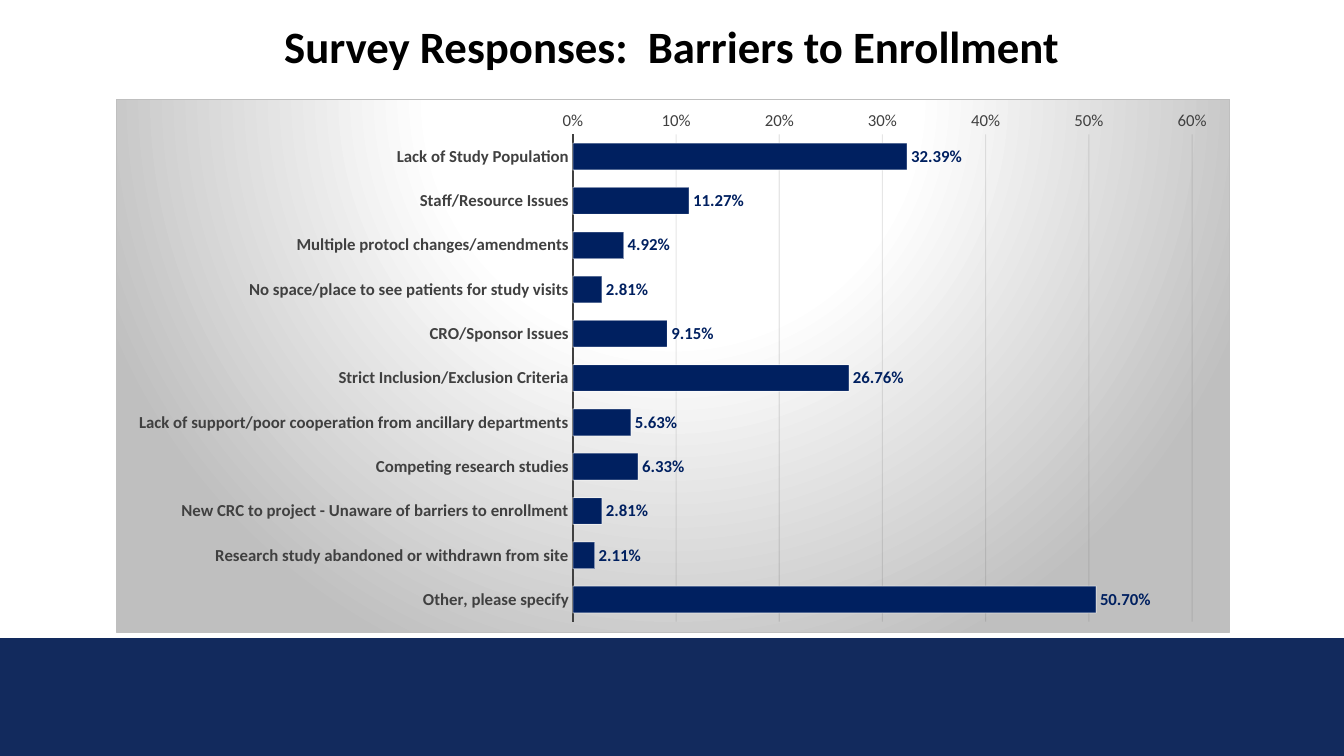
from lxml.etree import SubElement
from pptx import Presentation
from pptx.chart.data import CategoryChartData
from pptx.dml.color import RGBColor
from pptx.enum.chart import XL_CHART_TYPE, XL_LABEL_POSITION, XL_TICK_MARK
from pptx.enum.shapes import MSO_SHAPE
from pptx.enum.text import MSO_ANCHOR, PP_ALIGN
from pptx.oxml import parse_xml
from pptx.oxml.ns import nsdecls, qn
from pptx.util import Cm, Pt

FONT = "Calibri"
BLACK = RGBColor(0x00, 0x00, 0x00)
WHITE = RGBColor(0xFF, 0xFF, 0xFF)
BAND_BLUE = RGBColor(0x12, 0x2A, 0x5D)
BAR_NAVY = RGBColor(0x00, 0x20, 0x60)
AXIS_GREY = RGBColor(0x40, 0x40, 0x40)
GRID_DARK = RGBColor(0x0D, 0x0D, 0x0D)
PANEL_GREY = RGBColor(0xBF, 0xBF, 0xBF)

BARRIERS = {
    "Lack of Study Population": 0.3239,
    "Staff/Resource Issues": 0.1127,
    "Multiple protocl changes/amendments": 0.0492,
    "No space/place to see patients for study visits": 0.0281,
    "CRO/Sponsor Issues": 0.0915,
    "Strict Inclusion/Exclusion Criteria": 0.2676,
    "Lack of support/poor cooperation from ancillary departments": 0.0563,
    "Competing research studies": 0.0633,
    "New CRC to project - Unaware of barriers to enrollment": 0.0281,
    "Research study abandoned or withdrawn from site": 0.0211,
    "Other, please specify": 0.507,
}


def style_font(font, size, color, bold=False):
    font.name = FONT
    font.size = Pt(size)
    font.bold = bold
    font.color.rgb = color


def style_line(line, color, width, opacity=100):
    line.color.rgb = color
    line.width = Pt(width)
    if opacity < 100:
        color_xml = line.fill._xPr.find(".//" + qn("a:srgbClr"))
        SubElement(color_xml, qn("a:alpha"), val=str(opacity * 1000))


def add_footer_band(slide, left, top, width, height):
    band = slide.shapes.add_shape(MSO_SHAPE.RECTANGLE, left, top, width, height)
    band.shadow.inherit = False
    band.fill.solid()
    band.fill.fore_color.rgb = BAND_BLUE
    band.line.fill.background()


def add_title(slide, left, top, width, height):
    frame = slide.shapes.add_textbox(left, top, width, height).text_frame
    frame.word_wrap = True
    frame.vertical_anchor = MSO_ANCHOR.MIDDLE
    frame.text = "Survey Responses:  Barriers to Enrollment"
    heading = frame.paragraphs[0]
    heading.alignment = PP_ALIGN.CENTER
    heading.line_spacing = 0.9
    style_font(heading.runs[0].font, 32, BLACK, bold=True)


def fill_panel(chart):
    stops = "".join(
        f'<a:gs pos="{position * 1000}"><a:srgbClr val="{color}"/></a:gs>'
        for position, color in ((0, WHITE), (39, WHITE), (100, PANEL_GREY))
    )
    panel = parse_xml(
        f'<c:spPr {nsdecls("c", "a")}><a:gradFill><a:gsLst>{stops}</a:gsLst>'
        '<a:path path="circle">'
        '<a:fillToRect l="50000" t="-80000" r="50000" b="180000"/>'
        f'</a:path></a:gradFill><a:ln w="{Pt(0.75)}"><a:solidFill>'
        f'<a:srgbClr val="{PANEL_GREY}"/></a:solidFill></a:ln></c:spPr>'
    )
    chart._chartSpace.find(qn("c:chart")).addnext(panel)


def place_plot(chart, x, y, w, h):
    plot_area = chart._chartSpace.find(".//" + qn("c:plotArea"))
    for layout in plot_area.findall(qn("c:layout")):
        plot_area.remove(layout)
    sizes = "".join(
        f'<c:{key} val="{value}"/>'
        for key, value in (("x", x), ("y", y), ("w", w), ("h", h))
    )
    plot_area.insert(0, parse_xml(
        f'<c:layout {nsdecls("c")}><c:manualLayout><c:layoutTarget val="inner"/>'
        f'<c:xMode val="edge"/><c:yMode val="edge"/>{sizes}'
        '</c:manualLayout></c:layout>'
    ))


def style_axes(chart):
    barriers, share = chart.category_axis, chart.value_axis
    for axis in (barriers, share):
        axis.major_tick_mark = XL_TICK_MARK.NONE
        axis.minor_tick_mark = XL_TICK_MARK.NONE
        style_font(axis.tick_labels.font, 12, AXIS_GREY, bold=axis is barriers)
    barriers.reverse_order = True
    barriers.has_major_gridlines = False
    style_line(barriers.format.line, AXIS_GREY, 1.5)
    share.minimum_scale, share.maximum_scale, share.major_unit = 0, 0.6, 0.1
    share.tick_labels.number_format = "0%"
    share.tick_labels.number_format_is_linked = False
    share.format.line.fill.background()
    share.has_major_gridlines = True
    style_line(share.major_gridlines.format.line, GRID_DARK, 0.75, opacity=10)


def style_bars(plot):
    plot.gap_width = 65
    plot.vary_by_categories = False
    bars = plot.series[0]
    bars.invert_if_negative = False
    bars.format.fill.solid()
    bars.format.fill.fore_color.rgb = BAR_NAVY
    style_line(bars.format.line, WHITE, 0.75, opacity=50)
    labels = bars.data_labels
    labels.show_value = True
    labels.position = XL_LABEL_POSITION.OUTSIDE_END
    labels.number_format = "0.00%"
    labels.number_format_is_linked = False
    style_font(labels.font, 12, BAR_NAVY, bold=True)


def add_barriers_chart(slide, left, top, width, height):
    responses = CategoryChartData(number_format="0.00%")
    responses.categories = list(BARRIERS)
    responses.add_series("Series 1", list(BARRIERS.values()))
    chart = slide.shapes.add_chart(
        XL_CHART_TYPE.BAR_CLUSTERED, left, top, width, height, responses
    ).chart
    chart.has_title = False
    chart.has_legend = False
    style_font(chart.font, 10, BLACK)
    fill_panel(chart)
    place_plot(chart, 0.41, 0.066, 0.556, 0.914)
    style_axes(chart)
    style_bars(chart.plots[0])


def main():
    deck = Presentation()
    deck.slide_width, deck.slide_height = Cm(33.87), Cm(19.05)
    slide = deck.slides.add_slide(deck.slide_layouts[6])
    band_top = Cm(16.08)
    add_footer_band(slide, 0, band_top, deck.slide_width, deck.slide_height - band_top)
    add_title(slide, Cm(2.33), 0, Cm(29.21), Cm(2.49))
    add_barriers_chart(slide, Cm(2.92), Cm(2.49), Cm(28.09), Cm(13.46))
    deck.save("out.pptx")


if __name__ == "__main__":
    main()
